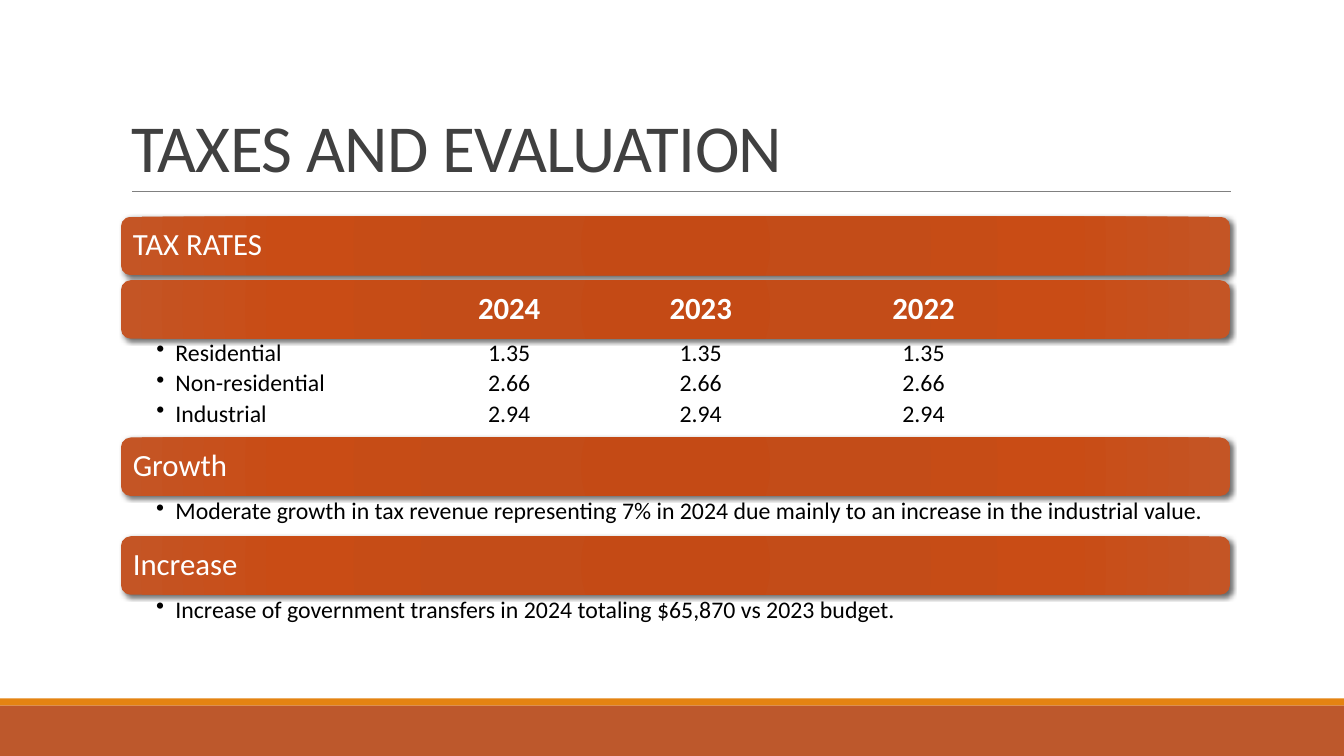
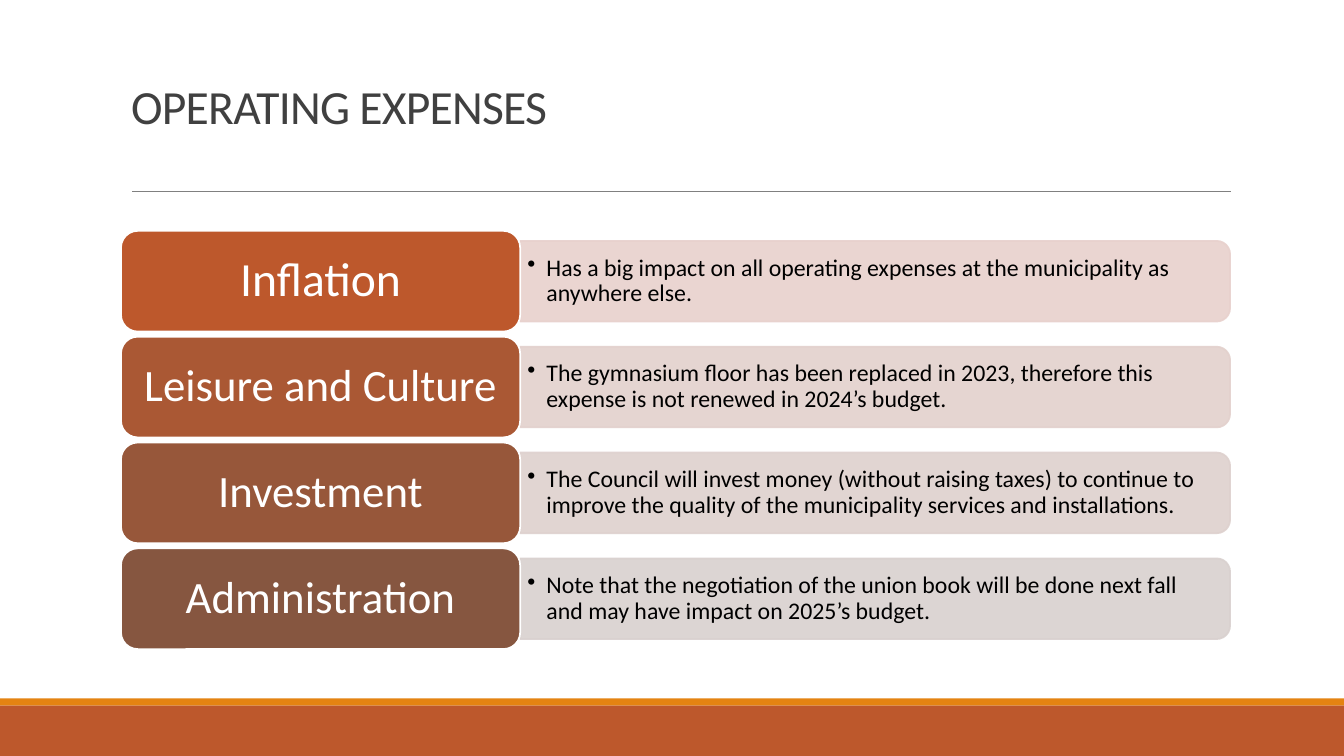
"""Build two budget slides: tax rates and operating expenses."""

from dataclasses import dataclass

from lxml.etree import SubElement
from pptx import Presentation
from pptx.dml.color import RGBColor
from pptx.enum.shapes import MSO_CONNECTOR, MSO_SHAPE
from pptx.enum.text import MSO_ANCHOR, PP_ALIGN
from pptx.oxml import parse_xml
from pptx.oxml.ns import nsdecls, qn
from pptx.presentation import Presentation as Deck
from pptx.shapes.autoshape import Shape
from pptx.slide import Slide
from pptx.text.text import TextFrame, _Paragraph as Paragraph
from pptx.util import Inches, Pt

FONT = "Calibri"
WHITE = RGBColor(0xFF, 0xFF, 0xFF)
BLACK = RGBColor(0x00, 0x00, 0x00)
TITLE_GREY = RGBColor(0x40, 0x40, 0x40)
RULE_GREY = RGBColor(0x80, 0x80, 0x80)
ORANGE = RGBColor(0xE4, 0x83, 0x12)
RUST = RGBColor(0xBD, 0x58, 0x2C)
BAR_STOPS = (
    (0, RGBColor(0xC4, 0x4A, 0x15)),
    (34, RGBColor(0xC3, 0x4C, 0x18)),
    (70, RGBColor(0xC9, 0x4C, 0x15)),
    (100, RGBColor(0xC4, 0x55, 0x25)),
)
NO_TABLE_STYLE = "{2D5ABB26-0587-4C30-8999-92F81FD0307C}"

PAGE_WIDTH = Inches(13.33)
LEFT = Inches(1.2)
WIDTH = Inches(11)
BAR_HEIGHT = Inches(0.58)
RATES_TOP = Inches(2.78)
RATE_ROW_HEIGHT = Inches(0.3)
RATE_COLUMNS = (Inches(2.9), Inches(1.9), Inches(1.9), Inches(2.52))
RATES = (
    ("", "2024", "2023", "2022"),
    ("Residential", "1.35", "1.35", "1.35"),
    ("Non-residential", "2.66", "2.66", "2.66"),
    ("Industrial", "2.94", "2.94", "2.94"),
)
CARD_TOP = Inches(2.29)
CARD_PITCH = Inches(1.05)
CARD_HEIGHT = Inches(1)
LABEL_WIDTH = Inches(3.96)
PANEL_HEIGHT = Inches(0.8)


@dataclass(frozen=True)
class Section:
    """A heading bar with an optional bullet below it."""

    top: Inches
    heading: str
    detail: str = ""


@dataclass(frozen=True)
class Expense:
    """An expense label with its explanation and colours."""

    label: str
    detail: str
    label_color: RGBColor
    panel_color: RGBColor
    size: int = 32


SECTIONS = (
    Section(Inches(2.15), "TAX RATES"),
    Section(RATES_TOP, ""),
    Section(
        Inches(4.34),
        "Growth",
        "Moderate growth in tax revenue representing 7% in 2024 due mainly to "
        "an increase in the industrial value.",
    ),
    Section(
        Inches(5.32),
        "Increase",
        "Increase of government transfers in 2024 totaling $65,870 vs 2023 budget.",
    ),
)
EXPENSES = (
    Expense(
        "Inflation",
        "Has a big impact on all operating expenses at the municipality as anywhere else.",
        RUST,
        RGBColor(0xE8, 0xD1, 0xCD),
        34,
    ),
    Expense(
        "Leisure and Culture",
        "The gymnasium floor has been replaced in 2023, therefore this expense is "
        "not renewed in 2024’s budget.",
        RGBColor(0xAA, 0x58, 0x34),
        RGBColor(0xE3, 0xD1, 0xCD),
    ),
    Expense(
        "Investment",
        "The Council will invest money (without raising taxes) to continue to improve "
        "the quality of the municipality services and installations.",
        RGBColor(0x97, 0x57, 0x3A),
        RGBColor(0xDE, 0xD1, 0xCE),
    ),
    Expense(
        "Administration",
        "Note that the negotiation of the union book will be done next fall and may "
        "have impact on 2025’s budget.",
        RGBColor(0x86, 0x56, 0x40),
        RGBColor(0xD9, 0xD1, 0xCF),
    ),
)


def write(para: Paragraph, text: str, size: int, color: RGBColor, bold: bool = False,
          align: PP_ALIGN = PP_ALIGN.LEFT, spacing: float = 0.9) -> None:
    """Add one styled run to a paragraph."""
    para.alignment = align
    para.line_spacing = spacing
    span = para.add_run()
    span.text = text
    span.font.name = FONT
    span.font.size = Pt(size)
    span.font.bold = bold
    span.font.color.rgb = color


def add_bullet(para: Paragraph) -> None:
    """Give a paragraph a hanging round bullet."""
    properties = para._p.get_or_add_pPr()
    properties.set("marL", str(Inches(0.19)))
    properties.set("indent", str(-Inches(0.19)))
    SubElement(properties, qn("a:buChar")).set("char", "•")


def set_frame(frame: TextFrame, anchor: MSO_ANCHOR, left: float, top: float,
              right: float, bottom: float) -> None:
    """Set wrapping, anchor and insets in inches."""
    frame.word_wrap = True
    frame.vertical_anchor = anchor
    frame.margin_left = Inches(left)
    frame.margin_top = Inches(top)
    frame.margin_right = Inches(right)
    frame.margin_bottom = Inches(bottom)


def add_box(page: Slide, kind: MSO_SHAPE, left: int, top: int, width: int, height: int,
            fill: RGBColor | None = None, line: RGBColor | None = None) -> Shape:
    """Draw a preset shape without a shadow."""
    box = page.shapes.add_shape(kind, left, top, width, height)
    box.shadow.inherit = False
    if fill is not None:
        box.fill.solid()
        box.fill.fore_color.rgb = fill
    if line is None:
        box.line.fill.background()
    else:
        box.line.color.rgb = line
        box.line.width = Pt(1.25)
    return box


def add_page(deck: Deck, title: str, size: int, bottom_inset: float) -> Slide:
    """Add a page with its title, rule and footer bands."""
    page = deck.slides.add_slide(deck.slide_layouts[5])
    add_box(page, MSO_SHAPE.RECTANGLE, 0, Inches(6.93), PAGE_WIDTH, Inches(0.07), ORANGE)
    add_box(page, MSO_SHAPE.RECTANGLE, 0, Inches(7), PAGE_WIDTH, Inches(0.5), RUST)
    rule = page.shapes.add_connector(
        MSO_CONNECTOR.STRAIGHT, Inches(1.31), Inches(1.9), Inches(12.21), Inches(1.9))
    rule.line.color.rgb = RULE_GREY
    rule.line.width = Pt(0.5)
    SubElement(rule._element.spPr, qn("a:effectLst"))
    heading = page.shapes.title
    heading.left, heading.top = LEFT, Inches(0.31)
    heading.width, heading.height = WIDTH, Inches(1.59)
    set_frame(heading.text_frame, MSO_ANCHOR.BOTTOM, 0.1, 0.05, 0.1, bottom_inset)
    para = heading.text_frame.paragraphs[0]
    write(para, title, size, TITLE_GREY, spacing=0.85)
    para.runs[0].font._element.set("spc", "-50")
    return page


def add_bullet_box(page: Slide, text: str, left: int, top: int, width: int, height: int,
                   anchor: MSO_ANCHOR, insets: tuple[float, float, float, float]) -> None:
    """Add a text box holding one bullet."""
    box = page.shapes.add_textbox(left, top, width, height)
    set_frame(box.text_frame, anchor, *insets)
    para = box.text_frame.paragraphs[0]
    write(para, text, 17, BLACK)
    add_bullet(para)


def add_section(page: Slide, section: Section) -> None:
    """Draw a gradient heading bar and its bullet."""
    bar = add_box(page, MSO_SHAPE.ROUNDED_RECTANGLE, LEFT, section.top, WIDTH, BAR_HEIGHT)
    stops = "".join(
        f'<a:gs pos="{position * 1000}"><a:srgbClr val="{color}"/></a:gs>'
        for position, color in BAR_STOPS)
    gradient = parse_xml(
        f'<a:gradFill {nsdecls("a")} rotWithShape="1"><a:gsLst>{stops}</a:gsLst>'
        '<a:path path="circle"><a:fillToRect l="100000" t="100000" r="100000" '
        'b="100000"/></a:path></a:gradFill>')
    properties = bar._element.spPr
    properties.find(qn("a:ln")).addprevious(gradient)
    properties.find(qn("a:effectLst")).append(parse_xml(
        f'<a:outerShdw {nsdecls("a")} blurRad="{Pt(3.5)}" dist="{Pt(2)}" dir="2700000" '
        f'rotWithShape="0"><a:srgbClr val="{BLACK}"><a:alpha val="60000"/></a:srgbClr>'
        '</a:outerShdw>'))
    if section.heading:
        set_frame(bar.text_frame, MSO_ANCHOR.MIDDLE, 0.09, 0.09, 0.09, 0.09)
        write(bar.text_frame.paragraphs[0], section.heading, 22, WHITE)
    if section.detail:
        add_bullet_box(page, section.detail, LEFT, section.top + BAR_HEIGHT, WIDTH,
                       Inches(0.4), MSO_ANCHOR.TOP, (0.35, 0.03, 0.17, 0.03))


def add_rates(page: Slide) -> None:
    """Lay the table of tax rates over its heading bar."""
    height = BAR_HEIGHT + RATE_ROW_HEIGHT * (len(RATES) - 1)
    table = page.shapes.add_table(
        len(RATES), len(RATE_COLUMNS), LEFT, RATES_TOP, sum(RATE_COLUMNS), height).table
    table.first_row = False
    table.horz_banding = False
    table._tbl.tblPr.find(qn("a:tableStyleId")).text = NO_TABLE_STYLE
    for column, width in zip(table.columns, RATE_COLUMNS):
        column.width = width
    for row, values in enumerate(RATES):
        header = row == 0
        table.rows[row].height = BAR_HEIGHT if header else RATE_ROW_HEIGHT
        for column, value in enumerate(values):
            cell = table.cell(row, column)
            cell.fill.background()
            cell.vertical_anchor = MSO_ANCHOR.MIDDLE
            cell.margin_top = cell.margin_bottom = cell.margin_right = 0
            cell.margin_left = Inches(0 if column else 0.35)
            if not value:
                continue
            para = cell.text_frame.paragraphs[0]
            write(para, value, 22 if header else 17, WHITE if header else BLACK, header,
                  PP_ALIGN.CENTER if column else PP_ALIGN.LEFT)
            if column == 0:
                add_bullet(para)


def add_expense(page: Slide, expense: Expense, top: int) -> None:
    """Draw an expense label beside its explanation panel."""
    panel_left = LEFT + LABEL_WIDTH
    panel_width = WIDTH - LABEL_WIDTH
    middle = top + CARD_HEIGHT // 2
    panel = add_box(
        page, MSO_SHAPE.ROUND_2_SAME_RECTANGLE,
        panel_left + (panel_width - PANEL_HEIGHT) // 2, middle - panel_width // 2,
        PANEL_HEIGHT, panel_width, expense.panel_color, expense.panel_color)
    panel.rotation = 90
    for color in panel._element.spPr.iter(qn("a:srgbClr")):
        SubElement(color, qn("a:alpha")).set("val", "90000")
    add_bullet_box(page, expense.detail, panel_left, middle - Inches(0.36), Inches(7),
                   Inches(0.72), MSO_ANCHOR.MIDDLE, (0.07, 0.04, 0.07, 0.04))
    label = add_box(page, MSO_SHAPE.ROUNDED_RECTANGLE, LEFT, top, LABEL_WIDTH, CARD_HEIGHT,
                    expense.label_color, WHITE)
    set_frame(label.text_frame, MSO_ANCHOR.MIDDLE, 0.13, 0.07, 0.13, 0.07)
    write(label.text_frame.paragraphs[0], expense.label, expense.size, WHITE,
          align=PP_ALIGN.CENTER)


def main() -> None:
    """Build and save the deck."""
    deck = Presentation()
    deck.slide_width, deck.slide_height = PAGE_WIDTH, Inches(7.5)
    taxes = add_page(deck, "TAXES AND EVALUATION", 48, 0.05)
    for section in SECTIONS:
        add_section(taxes, section)
    add_rates(taxes)
    expenses = add_page(deck, "OPERATING EXPENSES", 34, 0.57)
    for index, expense in enumerate(EXPENSES):
        add_expense(expenses, expense, CARD_TOP + CARD_PITCH * index)
    deck.save("out.pptx")


if __name__ == "__main__":
    main()
